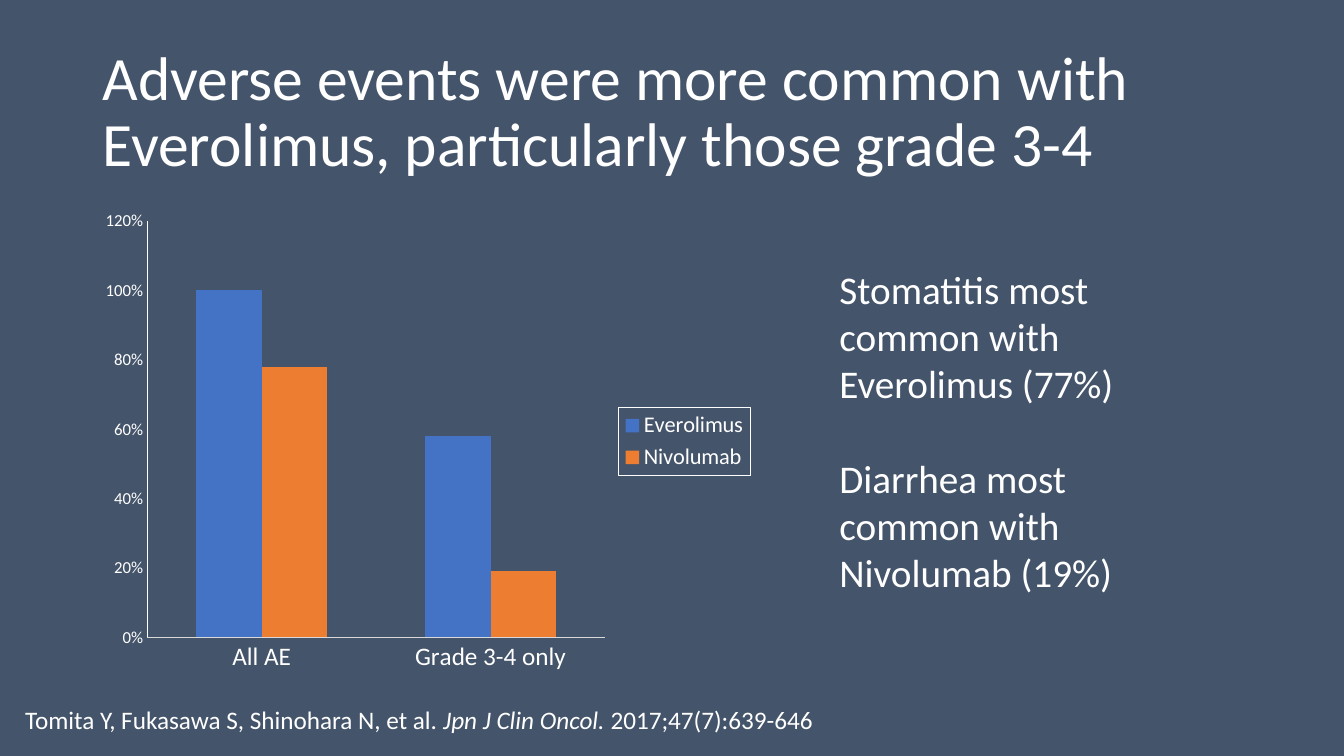
from lxml import etree
from pptx import Presentation
from pptx.chart.data import CategoryChartData
from pptx.dml.color import RGBColor
from pptx.enum.chart import XL_CHART_TYPE, XL_LEGEND_POSITION, XL_TICK_MARK
from pptx.enum.text import MSO_ANCHOR
from pptx.oxml import parse_xml
from pptx.oxml.ns import nsdecls, qn
from pptx.util import Pt

COLUMN = XL_CHART_TYPE.COLUMN_CLUSTERED
LEGEND_RIGHT = XL_LEGEND_POSITION.RIGHT
NO_TICK = XL_TICK_MARK.NONE
MIDDLE = MSO_ANCHOR.MIDDLE

SLATE = RGBColor(0x44, 0x54, 0x6A)
WHITE = RGBColor(0xFF, 0xFF, 0xFF)
GREY = RGBColor(0xD9, 0xD9, 0xD9)
BLUE = RGBColor(0x44, 0x72, 0xC4)
ORANGE = RGBColor(0xED, 0x7D, 0x31)
FONT = "Calibri"


def set_font(font, size):
    font.name = FONT
    font.size = Pt(size)
    font.color.rgb = WHITE


def add_run(p, text, size, italic=False):
    r = p.add_run()
    r.text = text
    set_font(r.font, size)
    r.font.italic = italic


prs = Presentation()
prs.slide_width = Pt(960)
prs.slide_height = Pt(540)
s = prs.slides.add_slide(prs.slide_layouts[5])
s.background.fill.solid()
s.background.fill.fore_color.rgb = SLATE

title = s.shapes.title
title.left, title.top, title.width, title.height = Pt(66), Pt(28.75), Pt(828), Pt(104.4)
tf = title.text_frame
tf.word_wrap = True
tf.vertical_anchor = MIDDLE
p = tf.paragraphs[0]
p.line_spacing = 0.9
pPr = p._p.get_or_add_pPr()
pPr.set("algn", "l")
add_run(p, "Adverse events were more common with Everolimus, particularly those grade 3-4", 44)

data = CategoryChartData(number_format="0%")
data.categories = ["All AE", "Grade 3-4 only"]
data.add_series("Everolimus", [1, 0.58])
data.add_series("Nivolumab", [0.78, 0.19])
chart = s.shapes.add_chart(COLUMN, Pt(66), Pt(144), Pt(476), Pt(342.7), data).chart
set_font(chart.font, 10)
chart.has_title = False

plot = chart.plots[0]
plot.gap_width = 150
plot.overlap = 0
plot.vary_by_categories = False
for series, color in zip(plot.series, [BLUE, ORANGE]):
    series.format.fill.solid()
    series.format.fill.fore_color.rgb = color

for axis, size, color in [(chart.category_axis, 18, GREY), (chart.value_axis, 12, WHITE)]:
    axis.has_major_gridlines = False
    axis.major_tick_mark = NO_TICK
    axis.minor_tick_mark = NO_TICK
    axis.format.line.color.rgb = color
    axis.format.line.width = Pt(0.75)
    set_font(axis.tick_labels.font, size)
values = chart.value_axis
values.minimum_scale = 0
values.maximum_scale = 1.2
values.major_unit = 0.2
values.tick_labels.number_format = "0%"
values.tick_labels.number_format_is_linked = False

chart.has_legend = True
legend = chart.legend
legend.position = LEGEND_RIGHT
legend.include_in_layout = False
set_font(legend.font, 16)
border = parse_xml(f"<c:spPr {nsdecls('c', 'a')}/>")
ln = etree.SubElement(border, qn("a:ln"), w="9525")
fill = etree.SubElement(ln, qn("a:solidFill"))
etree.SubElement(fill, qn("a:srgbClr"), val=str(WHITE))
legend._element.find(qn("c:txPr")).addprevious(border)

tf = s.shapes.add_textbox(Pt(592.5), Pt(185.8), Pt(265), Pt(244.8)).text_frame
tf.word_wrap = True
p = tf.paragraphs[0]
add_run(p, "Stomatitis most common with Everolimus (77%)", 28)
p = tf.add_paragraph()
p.space_before = Pt(34)
add_run(p, "Diarrhea most common with Nivolumab (19%)", 28)

tf = s.shapes.add_textbox(Pt(10.8), Pt(499.7), Pt(632.2), Pt(29)).text_frame
tf.word_wrap = True
p = tf.paragraphs[0]
add_run(p, "Tomita Y, Fukasawa S, Shinohara N, et al", 18)
add_run(p, ". Jpn J Clin Oncol. ", 18, italic=True)
add_run(p, "2017;47(7):639-646", 18)

prs.save("out.pptx")
